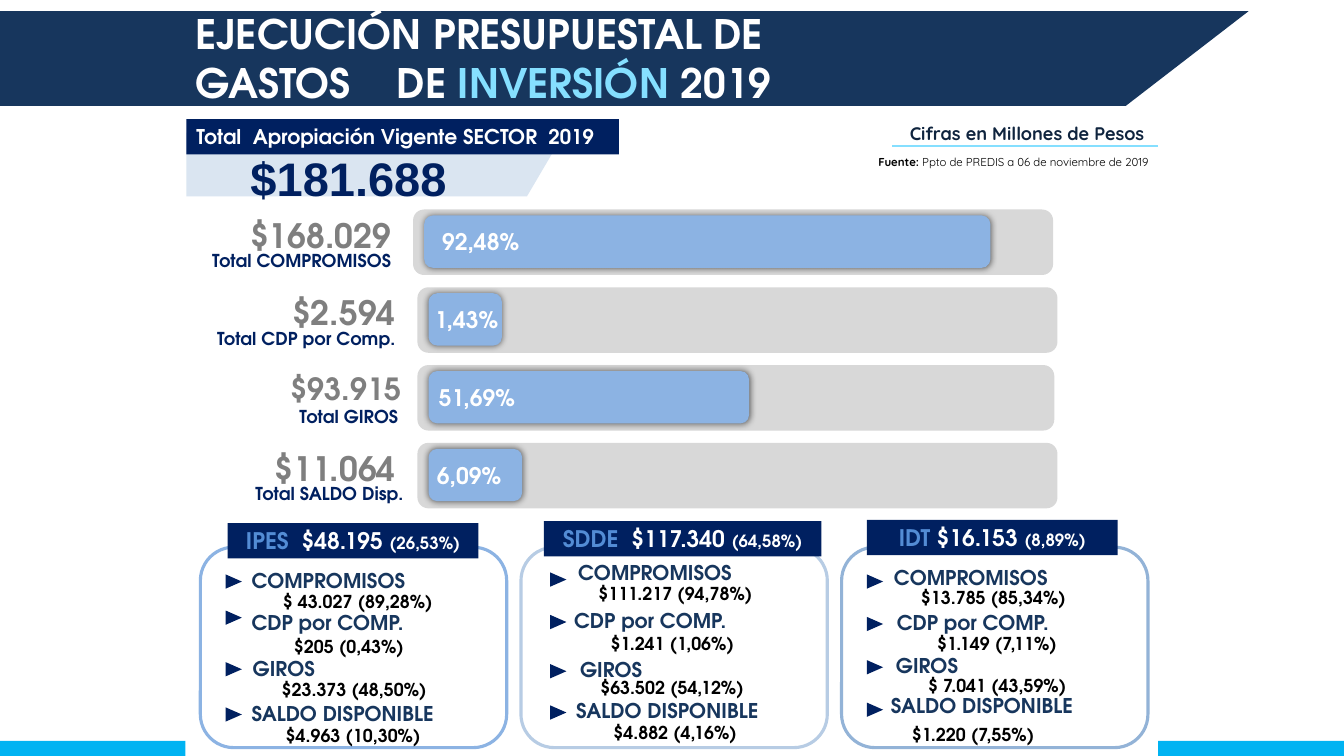
import pptx
import pptx.dml.color
import pptx.enum.shapes
import pptx.enum.text
import pptx.oxml
import pptx.oxml.ns
import pptx.util

Cm = pptx.util.Cm
SHAPES = pptx.enum.shapes.MSO_SHAPE
ALIGN = pptx.enum.text.PP_ALIGN
ANCHOR = pptx.enum.text.MSO_ANCHOR

NAVY, BANNER, WHITE, BLACK = "002060", "17365D", "FFFFFF", "000000"
TRACK, BAR, AQUA = "D8D8D8", "8CB3E3", "85DFFF"
ADVENTOR, QUICKSAND = "TeX Gyre Adventor", "Quicksand"


def style(size, colour, name=ADVENTOR, bold=True):
    return {"size": pptx.util.Pt(size), "name": name, "bold": bold, "colour": colour}


TITLE, TITLE_ACCENT = style(29, WHITE), style(29, AQUA)
TAG, SUM = style(14.5, WHITE), style(33.6, NAVY, "Arial")
UNIT = style(13, "0F243E", QUICKSAND)
SOURCE_LABEL = style(8.2, BLACK, QUICKSAND)
SOURCE = style(8.2, BLACK, QUICKSAND, False)
CAPTION, PERCENT = style(12.7, NAVY), style(16.3, WHITE)
ENTITY, SHARE = style(16.3, "538CD5"), style(12, WHITE)
LABEL, VALUE = style(14.5, BANNER), style(12.7, BLACK)

# amount, amount size, caption, percent, percent offset, track left, track width,
# bar width, gap from amount to track, gap from caption to track
BARS = [
    ("$168.029", 24, "Total COMPROMISOS", "92,48%", 0.48, 10.41, 16.13, 14.27, 0.3, 0.3),
    ("$2.594", 24, "Total CDP por Comp.", "1,43%", 0.19, 10.52, 16.13, 1.85, 0.3, 0.3),
    ("$93.915", 21.8, "Total GIROS", "51,69%", 0.29, 10.52, 16.05, 8.08, 0.15, 0.23),
    ("$11.064", 24, "Total SALDO Disp.", "6,09%", 0.24, 10.52, 16.13, 2.36, 0.3, 0.1),
]
ITEM_LABELS = ["COMPROMISOS", "CDP por COMP.", "GIROS", "SALDO DISPONIBLE"]
# panel left, outline, heading (offset x, y, width), heading texts, marker offset,
# items: value, label x, label y, value x, value y, marker y
PANELS = [
    (5.05, BAR, (0.69, -0.61, 6.32), ("IPES  ", "$48.195 ", "(26,53%)"), 0.66, [
        ("$ 43.027 (89,28%)", 1.04, 0.41, 1.83, 0.97, 0.66),
        ("$205 (0,43%)", 1.04, 1.45, 2.11, 2.11, 1.57),
        ("$23.373 (48,50%)", 1.07, 2.62, 1.8, 3.18, 2.87),
        ("$4.963 (10,30%)", 1.04, 3.76, 1.9, 4.34, 4.01)]),
    (13.13, "B7CCE4", (0.58, -0.66, 6.99), ("SDDE  ", "$117.340 ", "(64,58%)"), 0.76, [
        ("$111.217 (94,78%)", 1.19, 0.2, 1.7, 0.76, 0.61),
        ("$1.241 (1,06%)", 1.09, 1.42, 2.01, 2.03, 1.68),
        ("$63.502 (54,12%)", 1.24, 2.64, 1.75, 3.15, 2.92),
        ("$4.882 (4,16%)", 1.14, 3.68, 2.08, 4.27, 3.96)]),
    (21.21, "93B3D7", (0.64, -0.69, 6.32), ("IDT ", "$16.153 ", "(8,89%)"), 0.66, [
        ("$13.785 (85,34%)", 1.07, 0.33, 1.75, 0.86, 0.66),
        ("$1.149 (7,11%)", 1.14, 1.47, 2.16, 2.03, 1.73),
        ("$ 7.041 (43,59%)", 1.12, 2.54, 1.93, 3.1, 2.82),
        ("$1.220 (7,55%)", 0.99, 3.56, 1.52, 4.32, 3.89)]),
]


def rgb(colour):
    return pptx.dml.color.RGBColor.from_string(colour)


def write(frame, lines, align=ALIGN.LEFT):
    """Write lines, each a list of (text, style) spans, into a text frame."""
    frame.word_wrap = True
    for number, spans in enumerate(lines):
        para = frame.add_paragraph() if number else frame.paragraphs[0]
        para.alignment = align
        for text, values in spans:
            span = para.add_run()
            span.text = text
            for key, value in values.items():
                if key == "colour":
                    span.font.color.rgb = rgb(value)
                else:
                    setattr(span.font, key, value)


def add_text(page, left, top, width, height, spans, align=ALIGN.LEFT):
    box = page.shapes.add_textbox(Cm(left), Cm(top), Cm(width), Cm(height))
    write(box.text_frame, [spans], align)


def add_block(page, kind, left, top, width, height, fill=None):
    block = page.shapes.add_shape(kind, Cm(left), Cm(top), Cm(width), Cm(height))
    paint(block, fill)
    return block


def paint(shape, fill):
    shape.shadow.inherit = False
    shape.line.fill.background()
    if fill:
        shape.fill.solid()
        shape.fill.fore_color.rgb = rgb(fill)
    else:
        shape.fill.background()


def add_pennant(page, left, top, width, height, slant, fill):
    """Draw a strip whose right end slants inwards towards the bottom."""
    corners = [(left + width, top), (left + width - slant, top + height), (left, top + height)]
    builder = page.shapes.build_freeform(Cm(left), Cm(top))
    builder.add_line_segments([(Cm(x), Cm(y)) for x, y in corners], close=True)
    paint(builder.convert_to_shape(), fill)


def add_glow(shape):
    effects = shape._element.spPr.find(pptx.oxml.ns.qn("a:effectLst"))
    effects.append(pptx.oxml.parse_xml(
        f'<a:outerShdw {pptx.oxml.ns.nsdecls("a")} blurRad="63500" dist="0" dir="0">'
        '<a:srgbClr val="000000"><a:alpha val="60000"/></a:srgbClr></a:outerShdw>'))


def add_header(page, left, top):
    add_pennant(page, left, top, 31.47, 2.39, 3.1, BANNER)
    title = page.shapes.title
    place = {"left": left + 4.67, "top": top - 0.18, "width": 20.62, "height": 2.74}
    for key, value in place.items():
        setattr(title, key, Cm(value))
    title.text_frame.auto_size = pptx.enum.text.MSO_AUTO_SIZE.NONE
    title.text_frame.vertical_anchor = ANCHOR.TOP
    write(title.text_frame, [
        [("EJECUCIÓN PRESUPUESTAL DE", TITLE)],
        [("GASTOS \tDE ", TITLE), ("INVERSIÓN ", TITLE_ACCENT), ("2019", TITLE)]])
    page.shapes._spTree.append(title._element)


def add_total(page, left, top):
    add_pennant(page, left, top + 0.35, 9.52, 1.6, 0.94, "DAE5F1")
    add_text(page, left - 0.41, top + 0.63, 8.99, 1.7, [("$181.688", SUM)], ALIGN.CENTER)
    tag = add_block(page, SHAPES.RECTANGLE, left, top, 10.9, 0.89, NAVY)
    write(tag.text_frame, [[("Total  Apropiación Vigente SECTOR  2019", TAG)]])


def add_units(page, left, top):
    table = page.shapes.add_table(1, 1, Cm(left), Cm(top), Cm(7.57), Cm(1.09)).table
    table.first_row = table.horz_banding = False
    cell = table.cell(0, 0)
    cell.fill.background()
    cell.vertical_anchor = ANCHOR.MIDDLE
    for side in ("left", "right", "top", "bottom"):
        setattr(cell, f"margin_{side}", Cm(0.02))
    write(cell.text_frame, [[("Cifras en Millones de Pesos", UNIT)]], ALIGN.RIGHT)
    rule = page.shapes.add_connector(pptx.enum.shapes.MSO_CONNECTOR.STRAIGHT,
                                     Cm(left + 7.9), Cm(top + 0.86), Cm(left + 1.2), Cm(top + 0.86))
    rule.line.color.rgb = rgb(AQUA)
    rule.line.width = pptx.util.Pt(1)
    rule._element.spPr.append(pptx.oxml.parse_xml(f'<a:effectLst {pptx.oxml.ns.nsdecls("a")}/>'))
    add_text(page, left, top + 0.96, 7.92, 0.94, [
        ("Fuente: ", SOURCE_LABEL), ("Ppto de PREDIS a 06 de noviembre de 2019", SOURCE)], ALIGN.RIGHT)


def add_bar(page, top, amount, size, caption, percent, percent_x, left, width, bar_width,
            amount_gap, caption_gap):
    add_block(page, SHAPES.FLOWCHART_ALTERNATE_PROCESS, left, top, width, 1.65, TRACK)
    bar = add_block(page, SHAPES.FLOWCHART_ALTERNATE_PROCESS, left + 0.28, top + 0.15, bar_width, 1.32, BAR)
    add_glow(bar)
    add_text(page, left + percent_x, top + 0.34, 3.5, 0.97, [(percent, PERCENT)])
    add_text(page, left - caption_gap - 6.68, top + 0.89, 6.68, 0.79, [(caption, CAPTION)], ALIGN.RIGHT)
    add_text(page, left - amount_gap - 5.56, top, 5.56, 1.27, [(amount, style(size, "7F7F7F"))], ALIGN.RIGHT)


def add_panel(page, top, left, outline, heading_place, heading_texts, marker_x, items):
    frame = add_block(page, SHAPES.FLOWCHART_ALTERNATE_PROCESS, left, top, 7.72, 5.05)
    frame.line.color.rgb = rgb(outline)
    frame.line.width = pptx.util.Pt(2.25)
    x, y, width = heading_place
    heading = add_block(page, SHAPES.RECTANGLE, left + x, top + y, width, 0.89, NAVY)
    heading.text_frame.margin_left = heading.text_frame.margin_right = 0
    write(heading.text_frame, [list(zip(heading_texts, (ENTITY, PERCENT, SHARE)))], ALIGN.CENTER)
    for label, (value, label_x, label_y, value_x, value_y, marker_y) in zip(ITEM_LABELS, items):
        marker = add_block(page, SHAPES.ISOSCELES_TRIANGLE, left + marker_x, top + marker_y, 0.36, 0.41, NAVY)
        marker.rotation = 90
        add_text(page, left + label_x, top + label_y, 6.12, 0.89, [(label, LABEL)])
        add_text(page, left + value_x, top + value_y, 5.3, 0.79, [(value, VALUE)])


def build_budget_page(deck):
    page = deck.slides.add_slide(deck.slide_layouts[5])
    add_block(page, SHAPES.RECTANGLE, 0, 18.67, 33.87, 0.38, "00B3F2")
    add_header(page, 0, 0.28)
    add_total(page, 4.7, 3)
    add_units(page, 21.28, 2.82)
    for number, bar in enumerate(BARS):
        add_bar(page, 5.28 + 1.96 * number, *bar)
    add_block(page, SHAPES.RECTANGLE, 4.67, 18.29, 24.51, 0.76, WHITE)
    for panel in PANELS:
        add_panel(page, 13.79, *panel)


def main():
    deck = pptx.Presentation()
    deck.slide_width, deck.slide_height = Cm(33.87), Cm(19.05)
    build_budget_page(deck)
    deck.save("out.pptx")


if __name__ == "__main__":
    main()
